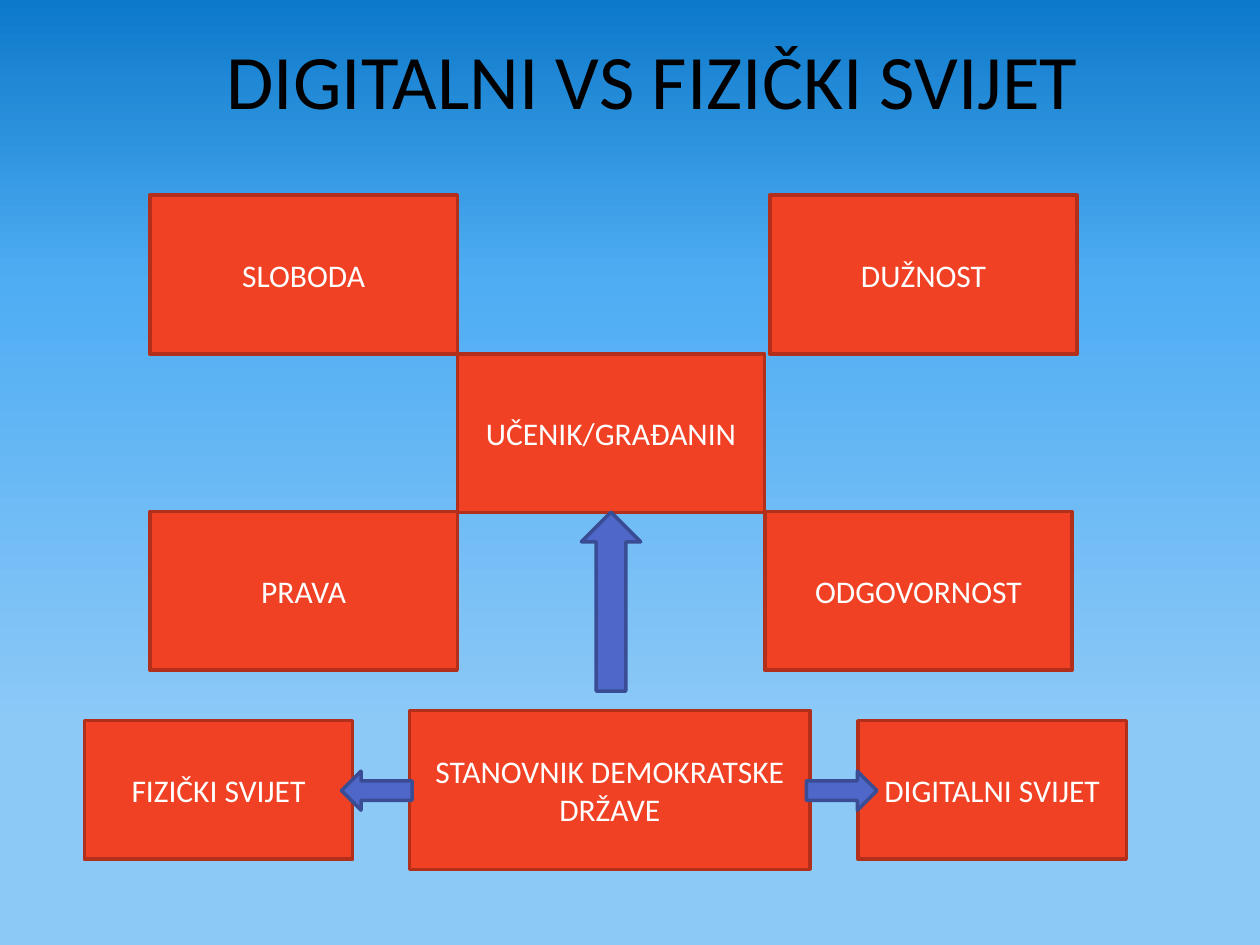
from copy import deepcopy

from pptx import Presentation
from pptx.dml.color import RGBColor as RGB
from pptx.enum.shapes import MSO_SHAPE as Kind
from pptx.enum.text import MSO_ANCHOR as Anchor, PP_ALIGN as Align
from pptx.util import Inches, Pt

BOX = {"fill": "F14124", "line": "B2301B"}
ARROW = {"fill": "4E67C8", "line": "3A4C94"}


def paint(color, value):
    color.rgb = RGB.from_string(value)


def draw(host, kind, spot, look, text="", turn=0):
    shape = host.add_shape(kind, *map(Inches, spot))
    shape.shadow.inherit = False
    shape.rotation = turn
    shape.fill.solid()
    paint(shape.fill.fore_color, look["fill"])
    paint(shape.line.color, look["line"])
    shape.line.width = Pt(2)
    if text:
        write(shape.text_frame, text, 18, "FFFFFF")


def write(frame, text, size, color):
    frame.text = text
    frame.word_wrap = True
    frame.vertical_anchor = Anchor.MIDDLE
    para = frame.paragraphs[0]
    para.alignment = Align.CENTER
    font = para.runs[0].font
    for key, value in {"name": "Calibri", "size": Pt(size)}.items():
        setattr(font, key, value)
    paint(font.color, color)


deck = Presentation()
deck.slide_width, deck.slide_height = Inches(10), Inches(7.5)
slide = deck.slides.add_slide(deck.slide_layouts[5])

# Background gradient, top to bottom
back = slide.background.fill
back.gradient()
back.gradient_angle = 270
last = back.gradient_stops[1]._gs
last.addnext(deepcopy(last))
stops = [(0, "0D79CA"), (0.3, "4FADF3"), (0.77, "8CC9F7")]
for stop, (place, color) in zip(back.gradient_stops, stops):
    stop.position = place
    paint(stop.color, color)

# Title
title = slide.shapes.title
spot = {"left": 0.68, "top": 0, "width": 9, "height": 1.25}
for key, value in spot.items():
    setattr(title, key, Inches(value))
write(title.text_frame, "DIGITALNI VS FIZIČKI SVIJET", 44, "000000")

# Pupil in the centre, four ideas at the corners
wide, high = 2.44, 1.26
group = slide.shapes.add_group_shape().shapes
for left, top, text in [
    (3.63, 2.81, "UČENIK/GRAĐANIN"),
    (6.11, 1.55, "DUŽNOST"),
    (1.19, 1.55, "SLOBODA"),
    (1.19, 4.06, "PRAVA"),
    (6.07, 4.06, "ODGOVORNOST"),
]:
    draw(group, Kind.RECTANGLE, (left, top, wide, high), BOX, text)

# Citizen between the two worlds
draw(group, Kind.RECTANGLE, (3.25, 5.64, 3.18, high), BOX,
     "STANOVNIK DEMOKRATSKE DRŽAVE")
for left, text in [(6.81, "DIGITALNI SVIJET"), (0.67, "FIZIČKI SVIJET")]:
    draw(group, Kind.RECTANGLE, (left, 5.72, 2.13, 1.1), BOX, text)

# Arrows up, left and right
for spot, turn in [
    ((4.14, 4.54, 1.42, 0.47), 270),
    ((2.71, 6.12, 0.56, 0.31), 180),
    ((6.4, 6.12, 0.56, 0.31), 0),
]:
    draw(slide.shapes, Kind.RIGHT_ARROW, spot, ARROW, turn=turn)

deck.save("out.pptx")
